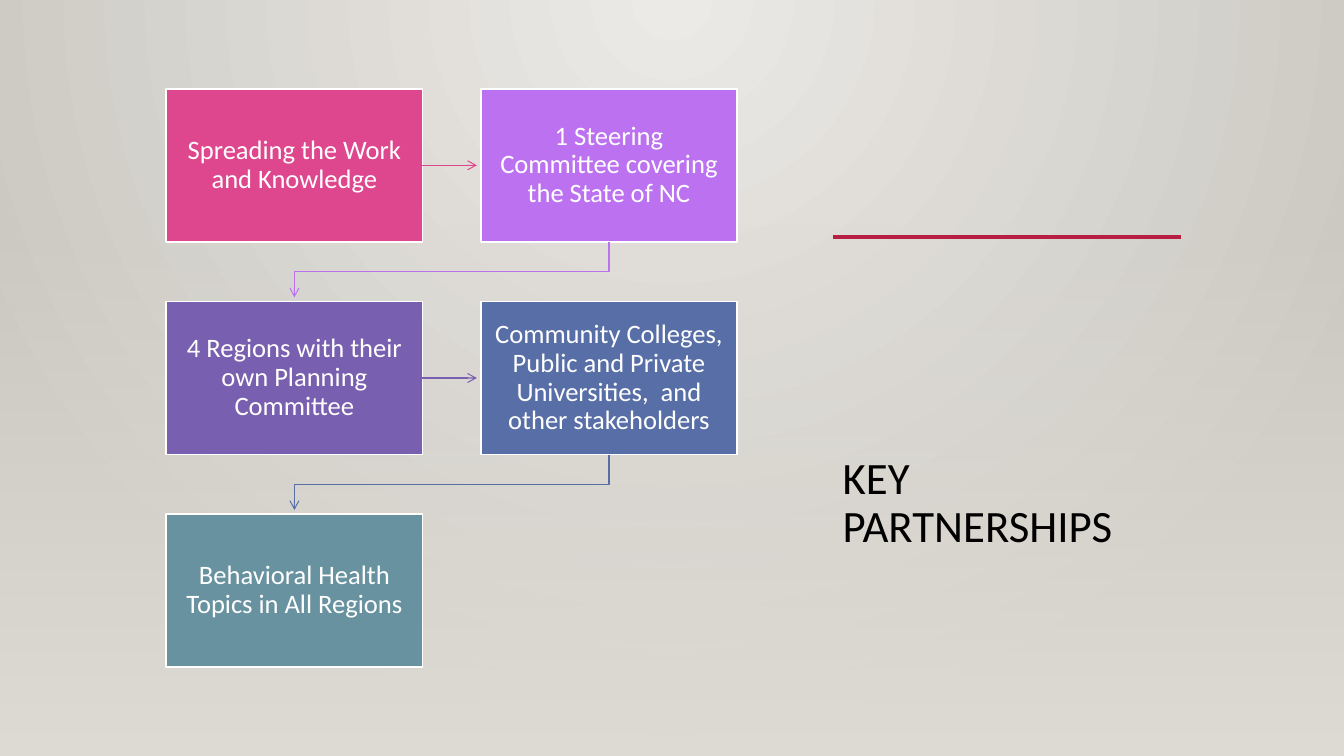
from lxml import etree
from pptx import Presentation
from pptx.dml.color import RGBColor
from pptx.enum.shapes import MSO_CONNECTOR, MSO_SHAPE
from pptx.enum.text import MSO_ANCHOR, PP_ALIGN
from pptx.oxml import parse_xml
from pptx.oxml.ns import nsdecls, qn
from pptx.util import Inches, Pt

STRAIGHT = MSO_CONNECTOR.STRAIGHT
RECTANGLE = MSO_SHAPE.RECTANGLE
MIDDLE, TOP = MSO_ANCHOR.MIDDLE, MSO_ANCHOR.TOP
CENTER, LEFT = PP_ALIGN.CENTER, PP_ALIGN.LEFT
RIGHT_SIDE = 3

TITLE = "KEY PARTNERSHIPS"
STEPS = [
    ("Spreading the Work and Knowledge", "DE478E"),
    ("1 Steering Committee covering the State of NC", "BC72F0"),
    ("4 Regions with their own Planning Committee", "795FAF"),
    ("Community Colleges, Public and Private Universities,  and other stakeholders", "586EA6"),
    ("Behavioral Health Topics in All Regions", "6892A0"),
]

THEME = {
    "font": "Calibri", "title_size": 32, "step_size": 19,
    "title": "000000", "step_text": "FFFFFF", "outline": "FFFFFF", "rule": "B71E42",
    "glow_center": "ECEAE7", "glow_edge": "CAC7C1", "wash": "DFDBD5",
    "rule_width": 2.5, "outline_width": 1.25, "arrow_width": 0.75,
}

SLIDE_W, SLIDE_H = Inches(13.33), Inches(7.5)
COLUMNS = 2
FLOW_LEFT, FLOW_TOP = Inches(1.65), Inches(0.88)
STEP_W, STEP_H = Inches(2.54), Inches(1.52)
COLUMN_PITCH, ROW_PITCH = Inches(3.12), Inches(2.11)
ARROW_GAP = Inches(0.04)
WASH_TOP = Inches(2.21)
TITLE_LEFT, TITLE_TOP = Inches(8.26), Inches(2.52)
TITLE_W, TITLE_H = Inches(3.45), Inches(4.1)
RULE_Y = Inches(2.35)


def gradient(stops, direction):
    """Gradient fill element from (percent, colour, opacity percent) stops."""
    stop_xml = "".join(
        f'<a:gs pos="{position * 1000}"><a:srgbClr val="{color}">'
        f'<a:alpha val="{opacity * 1000}"/></a:srgbClr></a:gs>'
        for position, color, opacity in stops)
    return parse_xml(f'<a:gradFill {nsdecls("a")} rotWithShape="1">'
                     f"<a:gsLst>{stop_xml}</a:gsLst>{direction}</a:gradFill>")


def replace_gradient(fill, parent, new_gradient):
    fill.gradient()
    parent.replace(parent.find(qn("a:gradFill")), new_gradient)


def style_line(line, color, width, arrow=False):
    line.color.rgb = RGBColor.from_string(color)
    line.width = Pt(width)
    if arrow:
        ln = line._get_or_add_ln()
        etree.SubElement(ln, qn("a:tailEnd"), type="arrow")


def add_straight(slide, x1, y1, x2, y2, color, width, arrow=False):
    connector = slide.shapes.add_connector(STRAIGHT, x1, y1, x2, y2)
    style_line(connector.line, color, width, arrow)
    etree.SubElement(connector._element.spPr, qn("a:effectLst"))
    return connector


def set_text(shape, text, size, color, align, anchor):
    frame = shape.text_frame
    frame.word_wrap = True
    frame.vertical_anchor = anchor
    frame.text = text
    paragraph = frame.paragraphs[0]
    paragraph.alignment = align
    paragraph.line_spacing = 0.9
    font = paragraph.runs[0].font
    font.name = THEME["font"]
    font.size = Pt(size)
    font.color.rgb = RGBColor.from_string(color)
    return frame


def add_backdrop(slide):
    glow = gradient(
        [(0, THEME["glow_center"], 100), (100, THEME["glow_edge"], 100)],
        '<a:path path="circle"><a:fillToRect l="43000" t="0" r="43000" b="100000"/></a:path>')
    fill = slide.background.fill
    fill.gradient()
    background = slide._element.cSld.find(qn("p:bg")).find(qn("p:bgPr"))
    replace_gradient(fill, background, glow)

    wash = slide.shapes.add_shape(RECTANGLE, 0, WASH_TOP, SLIDE_W, SLIDE_H - WASH_TOP)
    wash.shadow.inherit = False
    wash.line.fill.background()
    replace_gradient(wash.fill, wash._element.spPr, gradient(
        [(0, THEME["wash"], 0), (100, THEME["wash"], 100)],
        '<a:lin ang="5400000" scaled="0"/>'))


def add_title(slide):
    title = slide.shapes.add_textbox(TITLE_LEFT, TITLE_TOP, TITLE_W, TITLE_H)
    frame = set_text(title, TITLE, THEME["title_size"], THEME["title"], LEFT, TOP)
    frame.margin_top = Inches(2)
    add_straight(slide, TITLE_LEFT, RULE_Y, TITLE_LEFT + TITLE_W, RULE_Y,
                 THEME["rule"], THEME["rule_width"])


def add_step(slide, index, text, color):
    row, column = divmod(index, COLUMNS)
    step = slide.shapes.add_shape(
        RECTANGLE, FLOW_LEFT + column * COLUMN_PITCH, FLOW_TOP + row * ROW_PITCH,
        STEP_W, STEP_H)
    step.shadow.inherit = False
    step.fill.solid()
    step.fill.fore_color.rgb = RGBColor.from_string(color)
    style_line(step.line, THEME["outline"], THEME["outline_width"])
    frame = set_text(step, text, THEME["step_size"], THEME["step_text"], CENTER, MIDDLE)
    frame.margin_left = frame.margin_right = Inches(0.12)
    frame.margin_top = frame.margin_bottom = Inches(0.13)
    return step


def add_arrow(slide, source, target, color):
    """Straight arrow within a row, stepped arrow down to the next row."""
    if source.top == target.top:
        y = source.top + source.height // 2
        arrow = add_straight(slide, source.left + source.width, y,
                             target.left - ARROW_GAP, y,
                             color, THEME["arrow_width"], arrow=True)
        arrow.begin_connect(source, RIGHT_SIDE)
        return
    start_x = source.left + source.width // 2
    end_x = target.left + target.width // 2
    bottom = source.top + source.height
    turn_y = (bottom + target.top) // 2
    builder = slide.shapes.build_freeform(start_x, bottom)
    builder.add_line_segments(
        [(start_x, turn_y), (end_x, turn_y), (end_x, target.top - ARROW_GAP)], close=False)
    arrow = builder.convert_to_shape()
    arrow.shadow.inherit = False
    arrow.fill.background()
    style_line(arrow.line, color, THEME["arrow_width"], arrow=True)


def main():
    presentation = Presentation()
    presentation.slide_width, presentation.slide_height = SLIDE_W, SLIDE_H
    slide = presentation.slides.add_slide(presentation.slide_layouts[6])
    add_backdrop(slide)
    add_title(slide)
    steps = [add_step(slide, i, text, color) for i, (text, color) in enumerate(STEPS)]
    for source, target, (_, color) in zip(steps, steps[1:], STEPS):
        add_arrow(slide, source, target, color)
    presentation.save("out.pptx")


if __name__ == "__main__":
    main()
